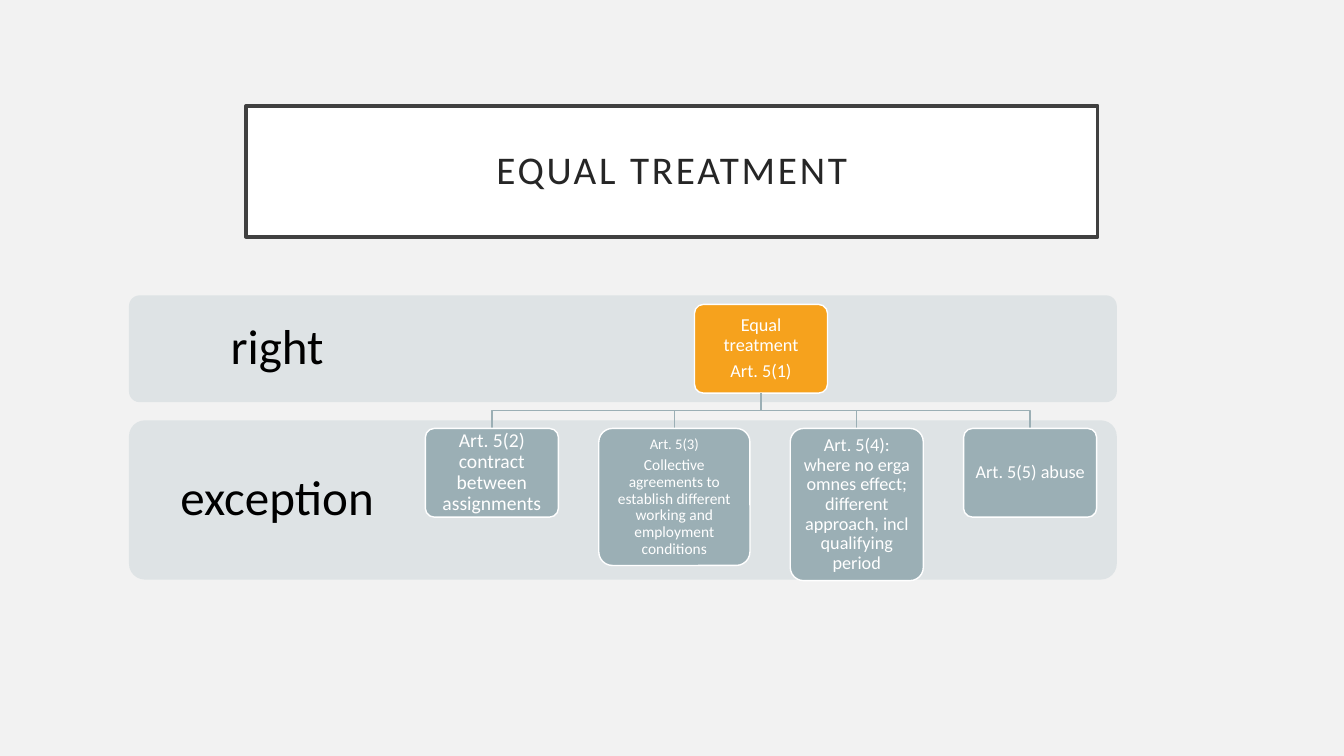
from pptx import Presentation
from pptx.dml.color import RGBColor
from pptx.enum.shapes import MSO_SHAPE
from pptx.enum.text import MSO_ANCHOR, PP_ALIGN
from pptx.util import Inches, Pt

RECTANGLE = MSO_SHAPE.RECTANGLE
ROUNDED = MSO_SHAPE.ROUNDED_RECTANGLE
MIDDLE = MSO_ANCHOR.MIDDLE
CENTER = PP_ALIGN.CENTER

SLIDE_WIDTH, SLIDE_HEIGHT = Inches(13.33), Inches(7.5)
FONT = "Calibri"
WHITE, BLACK, PAPER = "FFFFFF", "000000", "F2F2F2"
FRAME, INK = "404040", "262626"
BAND, SAGE, ORANGE = "DEE3E5", "9BAFB5", "F6A21D"

BAND_LEFT, BAND_WIDTH, LABEL_WIDTH = 9.6, 73.5, 22.05
CARD_WIDTH, WIDE_CARD, CARD_GAP = 9.9, 11.25, 3
CARD_HEIGHT = 11.73
CARDS_LEFT, CARDS_TOP = 31.65, 56.67
ROOT_TOP = 40.27

BANDS = [("right", 39.07, 14.13), ("exception", 55.6, 21.07)]
ROOT_TEXT = [("Equal treatment", 13), ("Art. 5(1)", 13)]
EXCEPTIONS = [
    (CARD_WIDTH, CARD_HEIGHT, [("Art. 5(2) contract between assignments", 14)]),
    (WIDE_CARD, 18.13, [
        ("Art. 5(3)", 10.5),
        ("Collective agreements to establish different working "
         "and employment conditions", 11),
    ]),
    (CARD_WIDTH, 20.13, [
        ("Art. 5(4): where no erga omnes effect; different approach, "
         "incl qualifying period", 13),
    ]),
    (CARD_WIDTH, CARD_HEIGHT, [("Art. 5(5) abuse", 13)]),
]


def color(value):
    return RGBColor.from_string(value)


def across(percent):
    return round(SLIDE_WIDTH * percent / 100)


def down(percent):
    return round(SLIDE_HEIGHT * percent / 100)


def place(left, top, width, height):
    return across(left), down(top), across(width), down(height)


def write(shape, lines, ink, inset):
    frame = shape.text_frame
    frame.word_wrap = True
    frame.vertical_anchor = MIDDLE
    frame.margin_left = frame.margin_right = Inches(inset)
    frame.margin_top = frame.margin_bottom = Inches(inset)
    for index, (text, size) in enumerate(lines):
        para = frame.add_paragraph() if index else frame.paragraphs[0]
        para.text = text
        para.alignment = CENTER
        para.line_spacing = 0.9
        para.space_after = Pt(size * 0.35)
        para.font.name = FONT
        para.font.size = Pt(size)
        para.font.color.rgb = color(ink)


def add_panel(page, kind, area, fill, line=None, line_width=1):
    panel = page.shapes.add_shape(kind, *place(*area))
    panel.shadow.inherit = False
    panel.fill.solid()
    panel.fill.fore_color.rgb = color(fill)
    if kind == ROUNDED:
        panel.adjustments[0] = 0.1
    if line:
        panel.line.color.rgb = color(line)
        panel.line.width = Pt(line_width)
    else:
        panel.line.fill.background()
    return panel


def add_title(page, text):
    title = add_panel(page, RECTANGLE, (18.3, 14, 63.38, 17.33), WHITE, FRAME, 2.5)
    write(title, [(text, 28)], INK, 0.2)
    span = title.text_frame.paragraphs[0].runs[0]
    span.font._element.set("spc", "200")


def add_band(page, text, top, height):
    add_panel(page, ROUNDED, (BAND_LEFT, top, BAND_WIDTH, height), BAND)
    label = page.shapes.add_textbox(*place(BAND_LEFT, top, LABEL_WIDTH, height))
    write(label, [(text, 35)], BLACK, 0.27)


def add_card(page, area, fill, lines):
    card = add_panel(page, ROUNDED, area, fill, WHITE)
    write(card, lines, WHITE, 0.09)


def add_branch(page, start, end):
    (start_x, start_y), (end_x, end_y) = start, end
    bend = (start_y + end_y) / 2
    builder = page.shapes.build_freeform(across(start_x), down(start_y))
    corners = [(start_x, bend), (end_x, bend), end]
    builder.add_line_segments([(across(x), down(y)) for x, y in corners], close=False)
    branch = builder.convert_to_shape()
    branch.shadow.inherit = False
    branch.fill.background()
    branch.line.color.rgb = color(SAGE)
    branch.line.width = Pt(1)


def add_tree(page):
    row_width = sum(width for width, _, _ in EXCEPTIONS) + CARD_GAP * (len(EXCEPTIONS) - 1)
    root_center = CARDS_LEFT + row_width / 2
    root_area = (root_center - CARD_WIDTH / 2, ROOT_TOP, CARD_WIDTH, CARD_HEIGHT)
    add_card(page, root_area, ORANGE, ROOT_TEXT)
    root_foot = (root_center, ROOT_TOP + CARD_HEIGHT)
    left = CARDS_LEFT
    for width, height, lines in EXCEPTIONS:
        add_branch(page, root_foot, (left + width / 2, CARDS_TOP))
        add_card(page, (left, CARDS_TOP, width, height), SAGE, lines)
        left += width + CARD_GAP


def main():
    deck = Presentation()
    deck.slide_width, deck.slide_height = SLIDE_WIDTH, SLIDE_HEIGHT
    page = deck.slides.add_slide(deck.slide_layouts[6])
    page.background.fill.solid()
    page.background.fill.fore_color.rgb = color(PAPER)
    add_title(page, "EQUAL TREATMENT")
    for text, top, height in BANDS:
        add_band(page, text, top, height)
    add_tree(page)
    deck.save("out.pptx")


if __name__ == "__main__":
    main()
